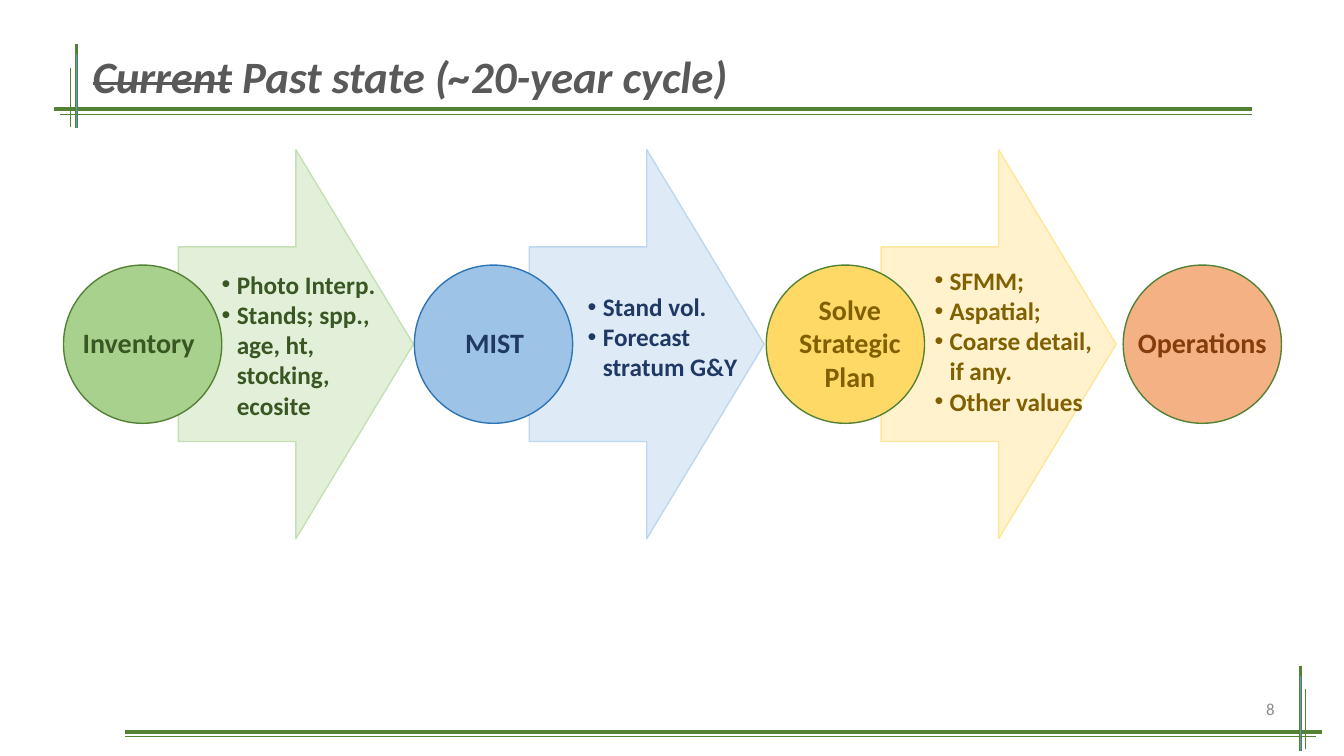
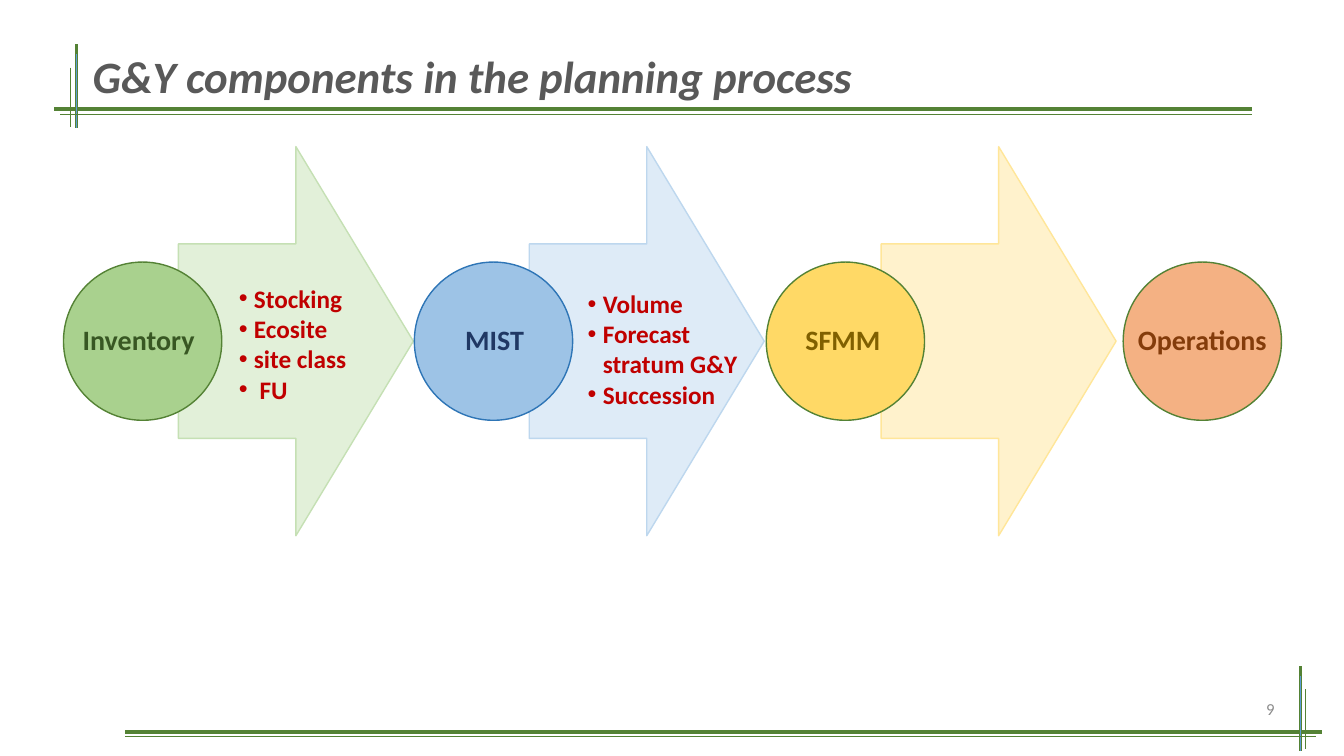
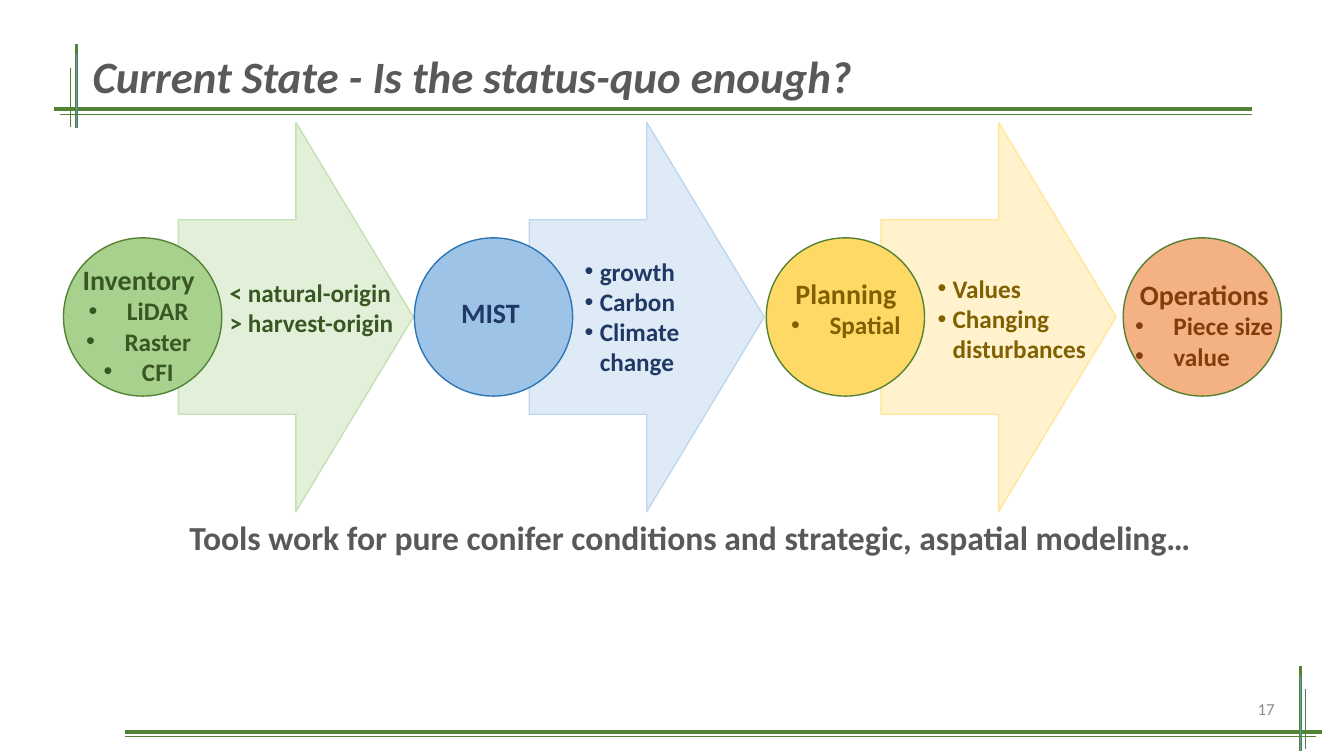
from dataclasses import dataclass

from lxml.etree import SubElement
from pptx import Presentation
from pptx.dml.color import RGBColor
from pptx.enum.shapes import MSO_CONNECTOR as Connector, MSO_SHAPE as Preset
from pptx.enum.text import MSO_ANCHOR as Anchor, PP_ALIGN as Align
from pptx.oxml.ns import qn
from pptx.util import Inches, Pt


@dataclass(frozen=True)
class Theme:
    font: str = "Calibri"
    bullet_font: str = "Arial"
    green: str = "548235"
    blue: str = "5B9BD5"
    grey: str = "595959"
    number: str = "8C8C8C"
    accent: str = "C00000"
    pale_green: str = "E2F0D9"
    title_size: float = 32
    closing_size: float = 24
    label_size: float = 20
    note_size: float = 18
    number_size: float = 12
    thick: float = 2.5
    thin: float = 0.5
    outline: float = 1
    note_indent: float = 0.15
    detail_indent: float = 0.38


THEME = Theme()


@dataclass(frozen=True)
class Stage:
    left: float
    fill: str
    line: str
    text: str
    arrow_fill: str = ""
    arrow_line: str = ""


INVENTORY = Stage(0.63, "A9D18E", THEME.green, "385723", THEME.pale_green, "C5E0B4")
MIST = Stage(4.11, "9DC3E6", "2E75B6", "203864", "DEEBF7", "BDD7EE")
PLAN = Stage(7.6, "FFD966", THEME.green, "806000", "FFF2CC", "FFE699")
OPERATIONS = Stage(11.14, "F4B183", THEME.green, "843C0B")
STAGES = (INVENTORY, MIST, PLAN, OPERATIONS)

CIRCLE = 1.57
ARROW_WIDTH, ARROW_HEIGHT = 2.33, 3.86
ARROW_SHIFT = 1.14

FRAME_LINES = (
    (0.54, 1.08, 12.42, 1.08, THEME.green, THEME.thick),
    (0.76, 0.44, 0.76, 1.27, THEME.green, THEME.thick),
    (0.76, 0.54, 0.76, 1.27, THEME.blue, THEME.thin),
    (0.7, 0.67, 0.7, 1.26, THEME.green, THEME.thin),
    (0.6, 1.13, 12.42, 1.13, THEME.green, THEME.thin),
    (13.11, 7.26, 1.24, 7.26, THEME.green, THEME.thick),
    (12.9, 6.61, 12.9, 7.45, THEME.green, THEME.thick),
    (12.9, 6.71, 12.9, 7.45, THEME.blue, THEME.thin),
    (12.95, 6.84, 12.95, 7.43, THEME.green, THEME.thin),
    (13.05, 7.31, 1.24, 7.31, THEME.green, THEME.thin),
)


def rgb(colour):
    return RGBColor.from_string(colour)


def add_line(page, x1, y1, x2, y2, colour, width):
    line = page.shapes.add_connector(
        Connector.STRAIGHT, Inches(x1), Inches(y1), Inches(x2), Inches(y2)
    )
    line.line.color.rgb = rgb(colour)
    line.line.width = Pt(width)
    SubElement(line._element.spPr, qn("a:effectLst"))


def add_preset(page, preset, area, fill, line):
    shape = page.shapes.add_shape(preset, *map(Inches, area))
    shape.shadow.inherit = False
    shape.fill.solid()
    shape.fill.fore_color.rgb = rgb(fill)
    shape.line.color.rgb = rgb(line)
    shape.line.width = Pt(THEME.outline)


def add_box(page, area, anchor=Anchor.TOP, wrap=True, fill=None):
    box = page.shapes.add_textbox(*map(Inches, area))
    if fill:
        box.fill.solid()
        box.fill.fore_color.rgb = rgb(fill)
    box.text_frame.word_wrap = wrap
    box.text_frame.vertical_anchor = anchor
    return box.text_frame


def style_span(span, size, colour, bold=True, italic=False):
    font = span.font
    font.name = THEME.font
    font.size = Pt(size)
    font.bold = bold
    font.italic = italic
    font.color.rgb = rgb(colour)


def add_bullet(para, indent):
    props = para._p.get_or_add_pPr()
    props.set("marL", str(Inches(indent)))
    props.set("indent", str(-Inches(indent)))
    SubElement(props, qn("a:buFont")).set("typeface", THEME.bullet_font)
    SubElement(props, qn("a:buChar")).set("char", "•")


def add_para(frame, text, size, colour, align=Align.LEFT, indent=0, bold=True):
    first = frame.paragraphs[0]
    para = frame.add_paragraph() if first.runs else first
    para.text = text
    para.alignment = align
    if indent:
        add_bullet(para, indent)
    for span in para.runs:
        style_span(span, size, colour, bold)


def add_title(page, text, struck=""):
    frame = add_box(page, (0.82, 0.26, 11.62, 1.04), Anchor.MIDDLE)
    para = frame.paragraphs[0]
    para.text = struck or text
    para.line_spacing = 0.9
    if struck:
        para.runs[0]._r.get_or_add_rPr().set("strike", "sngStrike")
        para.add_run().text = text
    for span in para.runs:
        style_span(span, THEME.title_size, THEME.grey, italic=True)


def add_process(page, top):
    arrow_top = top + (CIRCLE - ARROW_HEIGHT) / 2
    for stage in STAGES:
        if stage.arrow_fill:
            area = (stage.left + ARROW_SHIFT, arrow_top, ARROW_WIDTH, ARROW_HEIGHT)
            add_preset(page, Preset.RIGHT_ARROW, area, stage.arrow_fill, stage.arrow_line)
        area = (stage.left, top, CIRCLE, CIRCLE)
        add_preset(page, Preset.OVAL, area, stage.fill, stage.line)


def add_label(page, stage, area, name, details=(), detail_align=Align.CENTER):
    frame = add_box(page, area)
    add_para(frame, name, THEME.label_size, stage.text, Align.CENTER)
    for detail in details:
        add_para(frame, detail, THEME.note_size, stage.text, detail_align, THEME.detail_indent)


def add_notes(page, area, lines, colour, indent=THEME.note_indent, fill=None):
    frame = add_box(page, area, fill=fill)
    for line in lines:
        add_para(frame, line, THEME.note_size, colour, indent=indent)


def add_page(deck, number, title, process_top, struck=""):
    page = deck.slides.add_slide(deck.slide_layouts[6])
    for line in FRAME_LINES:
        add_line(page, *line)
    add_process(page, process_top)
    add_title(page, title, struck)
    frame = add_box(page, (9.74, 6.83, 3, 0.4), Anchor.MIDDLE)
    add_para(frame, number, THEME.number_size, THEME.number, Align.RIGHT, bold=False)
    return page


def add_outer_labels(page, top):
    add_label(page, INVENTORY, (0.59, top, CIRCLE, 0.44), "Inventory")
    add_label(page, MIST, (4.12, top, CIRCLE, 0.44), "MIST")
    add_label(page, OPERATIONS, (11.14, top, CIRCLE, 0.44), "Operations")


def build_past_state(deck):
    page = add_page(deck, "8", " Past state (~20-year cycle)", 2.63, "Current")
    add_outer_labels(page, 3.18)
    add_label(page, PLAN, (7.76, 2.85, 1.34, 1.11), "Solve\nStrategic Plan")
    add_notes(
        page, (2.1, 2.62, 1.78, 1.62),
        ("Photo Interp.", "Stands; spp., age, ht, stocking, ecosite"), INVENTORY.text,
    )
    add_notes(
        page, (5.73, 2.84, 1.78, 1.01), ("Stand vol.", "Forecast stratum G&Y"), MIST.text
    )
    add_notes(
        page, (9.17, 2.58, 1.78, 1.62),
        ("SFMM;", "Aspatial;", "Coarse detail, if any.", "Other values"), PLAN.text,
    )


def build_components(deck):
    page = add_page(deck, "9", "G&Y components in the planning process", 2.6)
    add_outer_labels(page, 3.15)
    add_label(page, PLAN, (7.69, 3.15, 1.34, 0.44), "SFMM")
    add_notes(
        page, (2.27, 2.76, 1.31, 1.36), ("Stocking", "Ecosite", "site class", " FU"),
        THEME.accent, fill=THEME.pale_green,
    )
    add_notes(
        page, (5.73, 2.81, 1.78, 1.31),
        ("Volume", "Forecast stratum G&Y", "Succession"), THEME.accent,
    )


def build_current_state(deck):
    page = add_page(deck, "17", "Current State - Is the status-quo enough?", 2.36)
    add_label(
        page, INVENTORY, (0.59, 2.55, CIRCLE, 1.35), "Inventory", ("LiDAR", "Raster", "CFI")
    )
    add_label(page, MIST, (4.08, 2.88, CIRCLE, 0.44), "MIST")
    add_label(page, PLAN, (7.72, 2.69, 1.34, 0.74), "Planning", ("Spatial",))
    add_label(
        page, OPERATIONS, (11.16, 2.7, CIRCLE, 1.04), "Operations",
        ("Piece size", "value"), Align.LEFT,
    )
    add_notes(
        page, (2.18, 2.7, 1.94, 0.71), ("< natural-origin", "> harvest-origin"),
        INVENTORY.text, indent=0,
    )
    add_notes(
        page, (5.7, 2.49, 1.79, 1.31), ("growth", "Carbon", "Climate change"), MIST.text
    )
    add_notes(page, (9.2, 2.66, 1.78, 1.01), ("Values", "Changing disturbances"), PLAN.text)
    closing = add_box(page, (1.78, 5.08, 10.17, 0.5), wrap=False)
    add_para(
        closing, "Tools work for pure conifer conditions and strategic, aspatial modeling…",
        THEME.closing_size, THEME.grey,
    )


def main():
    deck = Presentation()
    deck.slide_width = Inches(13.33)
    deck.slide_height = Inches(7.5)
    build_past_state(deck)
    build_components(deck)
    build_current_state(deck)
    deck.save("out.pptx")


if __name__ == "__main__":
    main()
